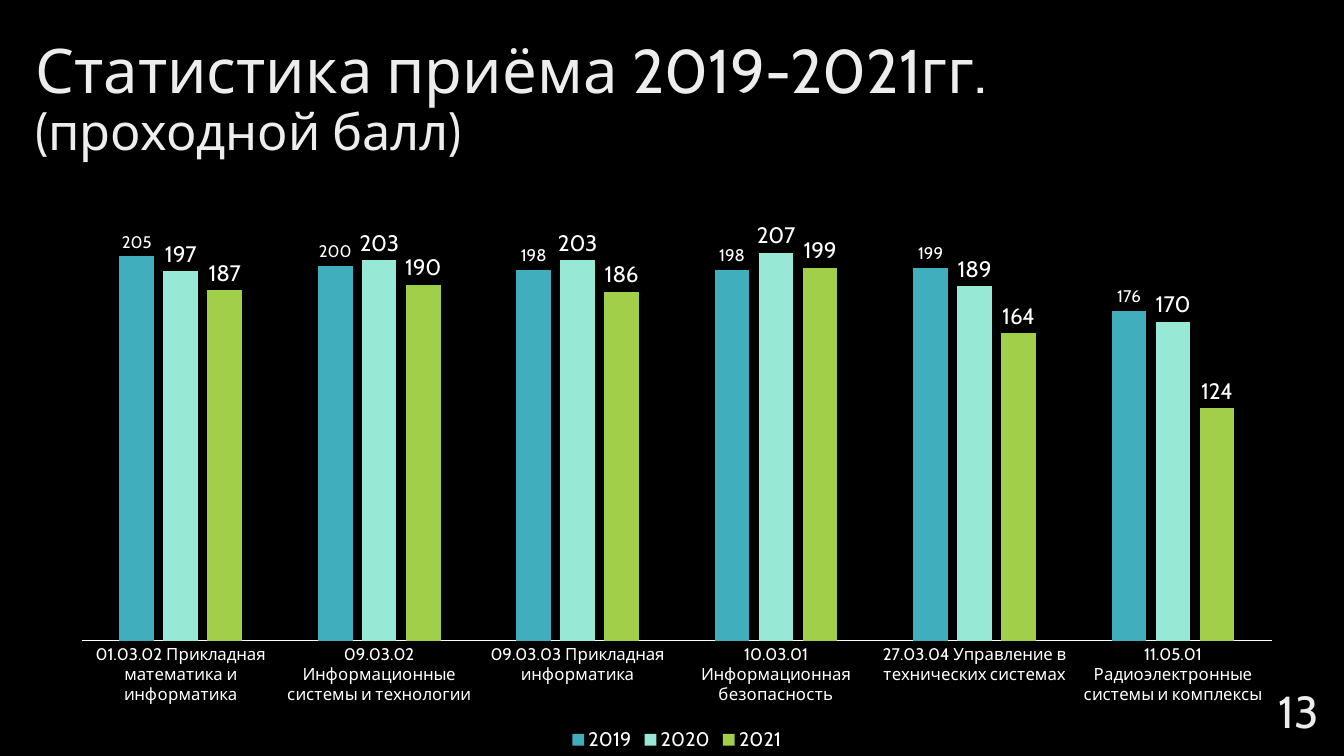
from dataclasses import dataclass

from pptx import Presentation
from pptx import util as u
from pptx.chart.data import CategoryChartData
from pptx.dml.color import RGBColor
from pptx.enum import chart as ch, text

Pt = u.Pt


@dataclass(frozen=True)
class Theme:
    font: str = "Cabin"
    background: str = "000000"
    heading: str = "EDEDED"
    body: str = "FFFFFF"
    title_size: int = 44
    subtitle_size: int = 36
    number_size: int = 32
    legend_size: int = 14
    axis_size: int = 12
    chart_size: int = 10


THEME = Theme()

PROGRAMMES = [
    "01.03.02 Прикладная математика и информатика",
    "09.03.02 Информационные системы и технологии",
    "09.03.03 Прикладная информатика",
    "10.03.01 Информационная безопасность",
    "27.03.04 Управление в технических системах",
    "11.05.01 Радиоэлектронные системы и комплексы",
]

# year, passing scores, bar colour, label size
SCORES = [
    ("2019", [205, 200, 198, 198, 199, 176], "41AEBD", 12),
    ("2020", [197, 203, 203, 207, 189, 170], "97E9D5", 16),
    ("2021", [187, 190, 186, 199, 164, 124], "A2CF49", 16),
]


def format_font(font, size, color=THEME.body):
    font.name = THEME.font
    font.size = Pt(size)
    font.bold = False
    font.color.rgb = RGBColor.from_string(color)


def add_run(p, content, *, size, color=THEME.heading):
    r = p.add_run()
    r.text = content
    format_font(r.font, size, color)


def prepare_frame(sp, align):
    """Set up wrapping and anchoring, and return the first paragraph."""
    tf = sp.text_frame
    tf.word_wrap = True
    tf.auto_size = text.MSO_AUTO_SIZE.NONE
    tf.vertical_anchor = text.MSO_ANCHOR.MIDDLE
    p = tf.paragraphs[0]
    p.alignment = align
    return p


def fill_title(s):
    title = s.shapes.title
    title.left, title.top, title.width, title.height = Pt(18), Pt(19.5), Pt(828), Pt(104.5)
    p = prepare_frame(title, text.PP_ALIGN.LEFT)
    p.line_spacing = 0.9
    add_run(p, "Статистика приёма 2019-2021гг. ", size=THEME.title_size)
    p.add_line_break()
    add_run(p, "(проходной балл)", size=THEME.subtitle_size)


def add_page_number(s, number):
    box = s.shapes.add_textbox(Pt(894), Pt(485.5), Pt(55), Pt(44))
    p = prepare_frame(box, text.PP_ALIGN.RIGHT)
    add_run(p, number, size=THEME.number_size)


def style_series(series, color, label_size):
    series.format.fill.solid()
    series.format.fill.fore_color.rgb = RGBColor.from_string(color)
    series.invert_if_negative = False
    labels = series.data_labels
    labels.show_value = True
    labels.position = ch.XL_LABEL_POSITION.OUTSIDE_END
    format_font(labels.font, label_size)


def style_axes(chart):
    scores = chart.value_axis
    scores.minimum_scale, scores.maximum_scale = 0, 250
    scores.has_major_gridlines = False
    scores.visible = False

    programmes = chart.category_axis
    programmes.major_tick_mark = ch.XL_TICK_MARK.NONE
    programmes.format.line.color.rgb = RGBColor.from_string(THEME.body)
    programmes.format.line.width = Pt(0.75)
    format_font(programmes.tick_labels.font, THEME.axis_size)


def add_score_chart(s):
    data = CategoryChartData(number_format="General")
    data.categories = PROGRAMMES
    for year, values, _, _ in SCORES:
        data.add_series(year, values)
    frame = s.shapes.add_chart(ch.XL_CHART_TYPE.COLUMN_CLUSTERED,
                               Pt(40.5), Pt(114.5), Pt(886), Pt(425.5), data)
    chart = frame.chart
    chart.has_title = False
    format_font(chart.font, THEME.chart_size)

    plot = chart.plots[0]
    plot.vary_by_categories = False
    plot.gap_width = 219
    plot.overlap = -27
    for series, (_, _, color, label_size) in zip(plot.series, SCORES):
        style_series(series, color, label_size)
    style_axes(chart)

    chart.has_legend = True
    chart.legend.position = ch.XL_LEGEND_POSITION.BOTTOM
    chart.legend.include_in_layout = False
    format_font(chart.legend.font, THEME.legend_size)


def main():
    prs = Presentation()
    prs.slide_width, prs.slide_height = Pt(960), Pt(540)
    s = prs.slides.add_slide(prs.slide_layouts.get_by_name("Title Only"))
    s.background.fill.solid()
    s.background.fill.fore_color.rgb = RGBColor.from_string(THEME.background)
    fill_title(s)
    add_score_chart(s)
    add_page_number(s, "13")
    prs.save("out.pptx")


if __name__ == "__main__":
    main()
